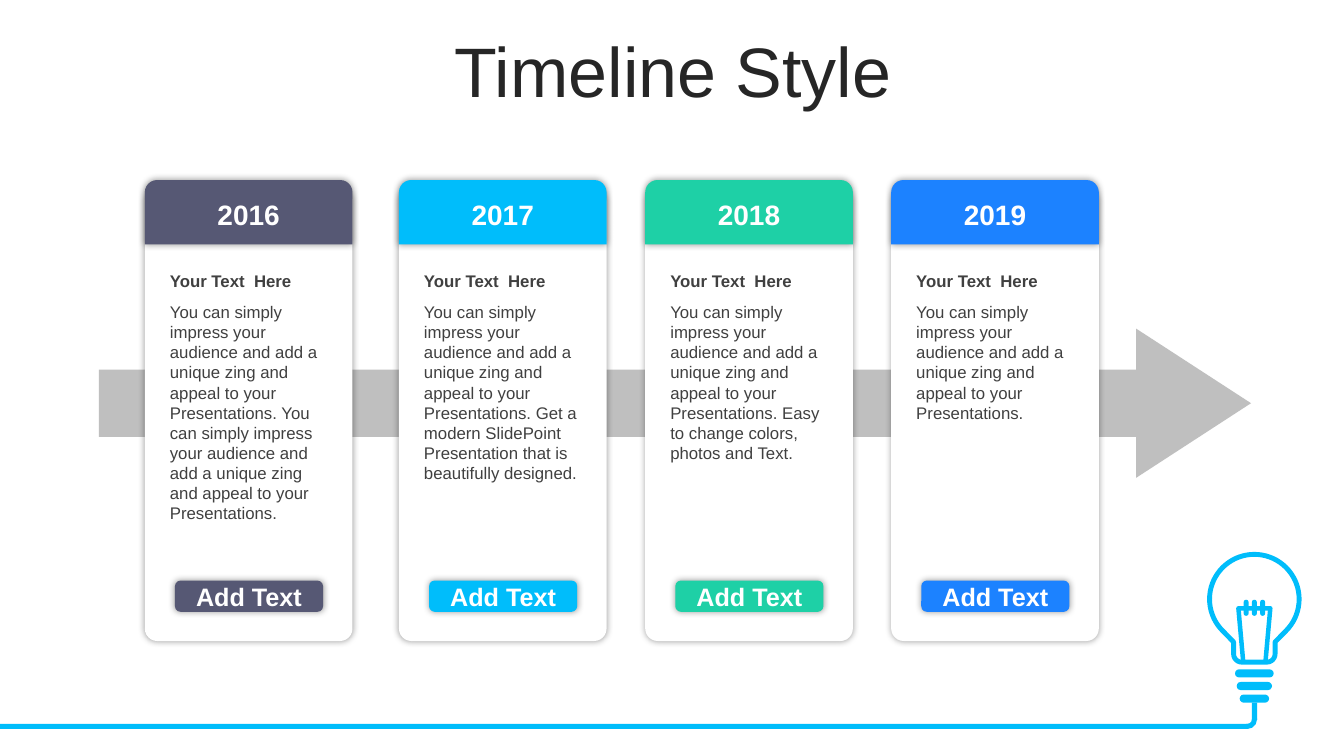
from dataclasses import dataclass
from math import cos, radians, sin

from lxml.etree import SubElement
from pptx import Presentation
from pptx.dml.color import RGBColor
from pptx.enum.shapes import MSO_SHAPE
from pptx.enum.text import MSO_ANCHOR, PP_ALIGN
from pptx.oxml.ns import qn
from pptx.util import Pt


@dataclass(frozen=True)
class Theme:
    font: str = "Arial"
    accent: str = "00BDFB"
    white: str = "FFFFFF"
    arrow: str = "BFBFBF"
    title: str = "262626"
    body: str = "404040"
    title_size: int = 50
    year_size: int = 20
    button_size: int = 18
    body_size: int = 12


class SlideBuilder:
    def __init__(self, slide, theme):
        self.shapes = slide.shapes
        self.theme = theme

    def paint(self, sp, fill=None, line=None, weight=0):
        sp.shadow.inherit = False
        if fill:
            sp.fill.solid()
            sp.fill.fore_color.rgb = RGBColor.from_string(fill)
        else:
            sp.fill.background()
        if line:
            sp.line.color.rgb = RGBColor.from_string(line)
            sp.line.width = Pt(weight)
        else:
            sp.line.fill.background()

    def shape(self, kind, x, y, w, h, fill, adj=(), glow=False):
        sp = self.shapes.add_shape(kind, Pt(x), Pt(y), Pt(w), Pt(h))
        for i, value in enumerate(adj):
            sp.adjustments[i] = value
        self.paint(sp, fill)
        if glow:
            self.soft_shadow(sp)
        return sp

    def soft_shadow(self, sp):
        effects = sp._element.spPr.find(qn("a:effectLst"))
        shadow = SubElement(effects, qn("a:outerShdw"), blurRad=str(Pt(5)),
                            dist="0", dir="0", algn="ctr", rotWithShape="0")
        color = SubElement(shadow, qn("a:srgbClr"), val="000000")
        SubElement(color, qn("a:alpha"), val="40000")

    def outline(self, points, weight, fill=None, close=False):
        pts = [(Pt(x), Pt(y)) for x, y in points]
        builder = self.shapes.build_freeform(*pts[0])
        builder.add_line_segments(pts[1:], close=close)
        self.paint(builder.convert_to_shape(), fill, self.theme.accent, weight)

    def add_run(self, sp, text, size, color, bold=False, align=PP_ALIGN.CENTER):
        p = sp.text_frame.paragraphs[0]
        p.alignment = align
        r = p.add_run()
        r.text = text
        r.font.name = self.theme.font
        r.font.size = Pt(size)
        r.font.bold = bold
        r.font.color.rgb = RGBColor.from_string(color)
        return p

    def label(self, sp, text, size):
        tf = sp.text_frame
        tf.margin_left = tf.margin_right = tf.margin_top = tf.margin_bottom = 0
        tf.vertical_anchor = MSO_ANCHOR.MIDDLE
        self.add_run(sp, text, size, self.theme.white, bold=True)

    def text(self, x, y, w, h, *args, **kwargs):
        sp = self.shapes.add_textbox(Pt(x), Pt(y), Pt(w), Pt(h))
        sp.text_frame.word_wrap = True
        return sp, self.add_run(sp, *args, **kwargs)

    def card(self, x, year, color, body, body_height):
        t = self.theme
        self.shape(MSO_SHAPE.ROUNDED_RECTANGLE, x, 134.6, 148.3, 323.3,
                   t.white, [0.06], glow=True)
        header = self.shape(MSO_SHAPE.ROUND_2_SAME_RECTANGLE, x, 128.6, 148.3,
                            45.9, color, [0.19, 0], glow=True)
        self.label(header, year, t.year_size)
        button = self.shape(MSO_SHAPE.ROUNDED_RECTANGLE, x + 21.5, 414.7, 105.8,
                            22.3, color, [0.18], glow=True)
        self.label(button, "Add Text", t.button_size)
        self.text(x + 10.8, 190.1, 127.4, 21.8, "Your Text  Here", t.body_size,
                  t.body, bold=True, align=PP_ALIGN.LEFT)
        self.text(x + 10.8, 211.9, 127.4, body_height, body, t.body_size,
                  t.body, align=PP_ALIGN.LEFT)


def arc(cx, cy, radius, start, end, step):
    return [(cx + radius * cos(radians(a)), cy + radius * sin(radians(a)))
            for a in range(start, end + 1, step)]


def draw_bulb(b):
    cx, accent = 896, b.theme.accent
    # Glass
    glass = arc(cx, 428, 32, 135, 405, 5)
    glass += [(cx + 14.8, 458.6)]
    glass += arc(cx + 9, 467.2, 5.8, 0, 90, 15)
    glass += arc(cx - 9, 467.2, 5.8, 90, 180, 15)
    glass += [(cx - 14.8, 458.6)]
    b.outline(glass, 3.5, b.theme.white, close=True)
    # Screw rings
    for i, width in enumerate((27.6, 25.2, 21)):
        b.shape(MSO_SHAPE.ROUNDED_RECTANGLE, cx - width / 2, 478.1 + 9 * i,
                width, 5.8, accent, [0.5])
    # Filament
    b.outline([(cx - 8, 472), (cx - 11.4, 434.5), (cx + 11.4, 434.5),
               (cx + 8, 472)], 3.2)
    for dx in (-5.9, 0, 5.9):
        b.shape(MSO_SHAPE.ROUNDED_RECTANGLE, cx + dx - 1.75, 428.4, 3.5, 11.5,
                accent, [0.5])
    # Cable
    b.shape(MSO_SHAPE.RECTANGLE, 0, 517, 890.7, 3.7, accent)
    b.shape(MSO_SHAPE.RECTANGLE, 894.2, 501.8, 3.7, 12.5, accent)
    b.shape(MSO_SHAPE.BLOCK_ARC, 884.2, 507, 13.7, 13.7, accent,
            [213.39, 60.92, 0.27])


def main():
    prs = Presentation()
    prs.slide_width, prs.slide_height = Pt(960), Pt(540)
    s = prs.slides.add_slide(prs.slide_layouts[6])
    theme = Theme()
    b = SlideBuilder(s, theme)

    draw_bulb(b)

    # Title
    sp, p = b.text(25.2, 26.6, 911.5, 56.9, "Timeline Style",
                   theme.title_size, theme.title)
    sp.text_frame.vertical_anchor = MSO_ANCHOR.MIDDLE
    p.line_spacing = 0.8
    p.space_before = Pt(10)

    # Timeline arrow
    b.shape(MSO_SHAPE.RIGHT_ARROW, 70.6, 234.7, 823, 106.6, theme.arrow,
            [0.45, 0.77])

    # Year cards
    intro = ("You can simply impress your audience and add a unique zing "
             "and appeal to your Presentations.")
    cards = [
        (103.5, "2016", "565874", f"{intro} {intro}", 167),
        (285, "2017", theme.accent, f"{intro} Get a modern SlidePoint "
         "Presentation that is beautifully designed.", 138.2),
        (460.9, "2018", "1ED0A6",
         f"{intro} Easy to change colors, photos and Text.", 123.8),
        (636.6, "2019", "1C82FF", intro, 94.3),
    ]
    for card in cards:
        b.card(*card)

    prs.save("out.pptx")


if __name__ == "__main__":
    main()
